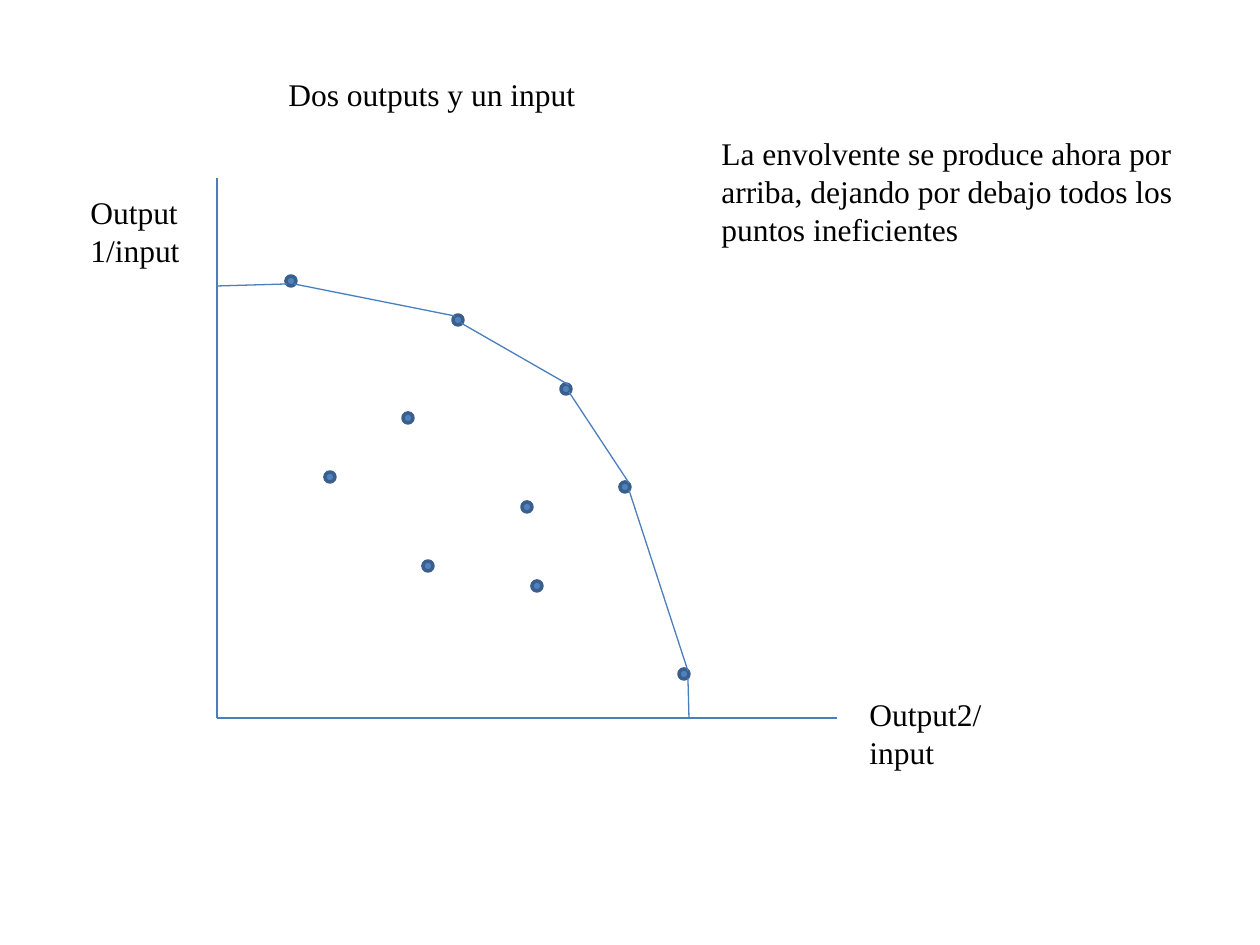
from lxml.etree import SubElement
from pptx import Presentation
from pptx.dml.color import RGBColor
from pptx.enum.shapes import MSO_CONNECTOR, MSO_SHAPE
from pptx.oxml.ns import qn
from pptx.util import Emu, Pt

PX = 914400 // 126
WIDTH, HEIGHT = 1260, 945
FONT, TEXT, LINE, FILL, RIM = "Times New Roman", "000000", "4B7EBC", "4F81BD", "3A5F8C"
DOT = 10

# text, left, top, width, height
LABELS = [
    ("Dos outputs y un input", 276, 69, 748, 50),
    ("Output1/input", 78, 187, 128, 89),
    ("Output2/input", 857, 689, 147, 89),
    ("La envolvente se produce ahora por arriba, dejando por debajo "
     "todos los puntos ineficientes", 709, 128, 493, 127),
]
# x1, y1, x2, y2
AXES = [(217, 178, 217, 718), (217, 718, 837, 718)]
FRONTIER = [
    (217, 286, 287, 284), (294, 284, 455, 316), (461, 323, 569, 385),
    (569, 392, 629, 483), (629, 490, 688, 671), (688, 678, 689, 718),
]
# centres
EFFICIENT = [(291, 281), (458, 320), (566, 389), (625, 487), (684, 674)]
INEFFICIENT = [(408, 418), (330, 477), (428, 566), (527, 507), (537, 586)]


def px(n):
    return Emu(n * PX)


def rgb(color):
    return RGBColor.from_string(color)


def add_label(shapes, text, *box):
    tf = shapes.add_textbox(*map(px, box)).text_frame
    tf.word_wrap = True
    p = tf.paragraphs[0]
    p.text = text
    p.font.name, p.font.size = FONT, Pt(18)
    p.font.color.rgb = rgb(TEXT)


def add_line(shapes, *ends):
    line = shapes.add_connector(MSO_CONNECTOR.STRAIGHT, *map(px, ends))
    line.line.color.rgb = rgb(LINE)
    line.line.width = Pt(0.75)
    SubElement(line._element.spPr, qn("a:effectLst"))


def add_dot(shapes, x, y):
    half = DOT // 2
    dot = shapes.add_shape(MSO_SHAPE.OVAL, px(x - half), px(y - half), px(DOT), px(DOT))
    dot.shadow.inherit = False
    dot.fill.solid()
    dot.fill.fore_color.rgb = rgb(FILL)
    dot.line.color.rgb = rgb(RIM)
    dot.line.width = Pt(2)


prs = Presentation()
prs.slide_width, prs.slide_height = px(WIDTH), px(HEIGHT)
shapes = prs.slides.add_slide(prs.slide_layouts[6]).shapes

for label in LABELS:
    add_label(shapes, *label)
for centre in EFFICIENT + INEFFICIENT:
    add_dot(shapes, *centre)
for ends in AXES + FRONTIER:
    add_line(shapes, *ends)

prs.save("out.pptx")
